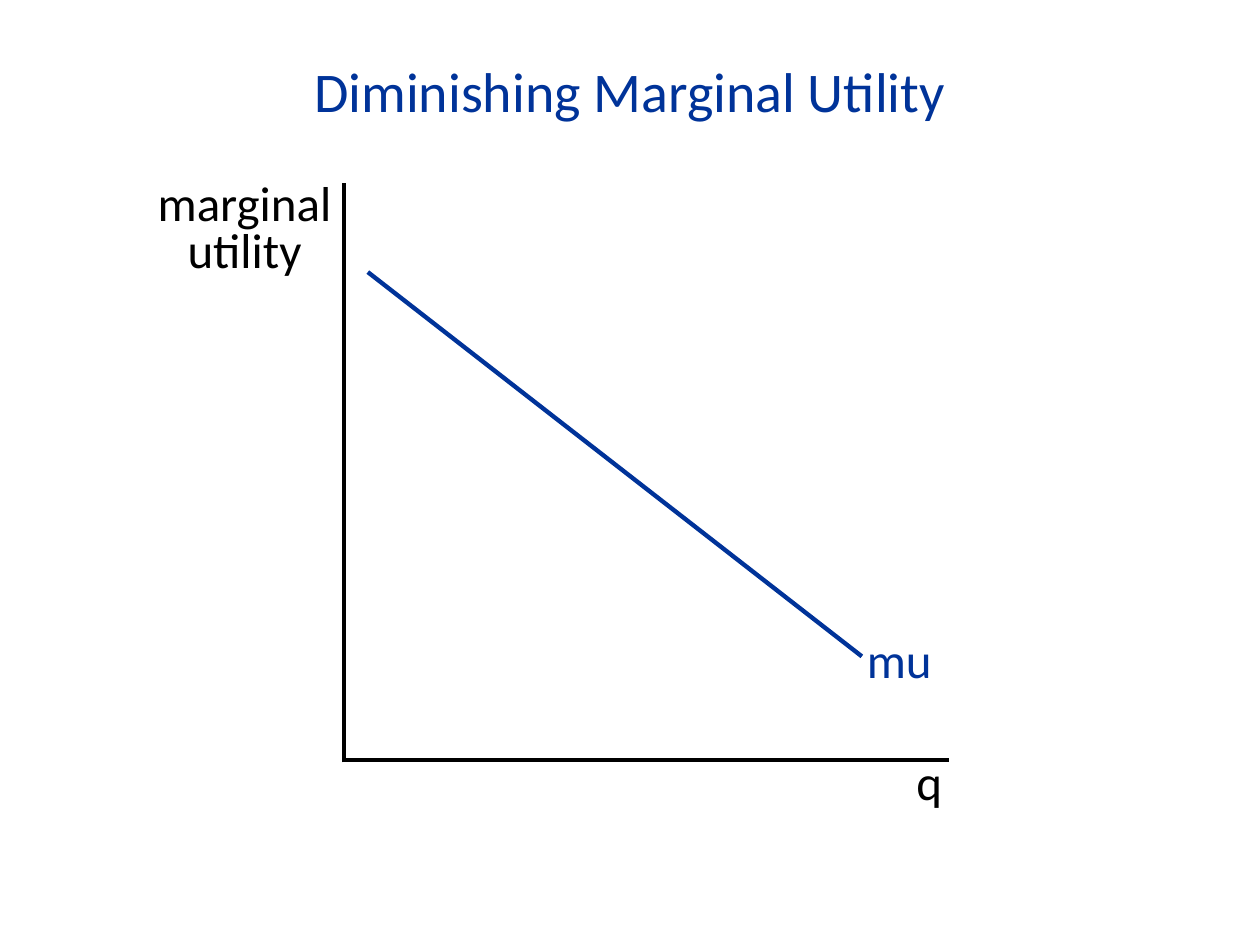
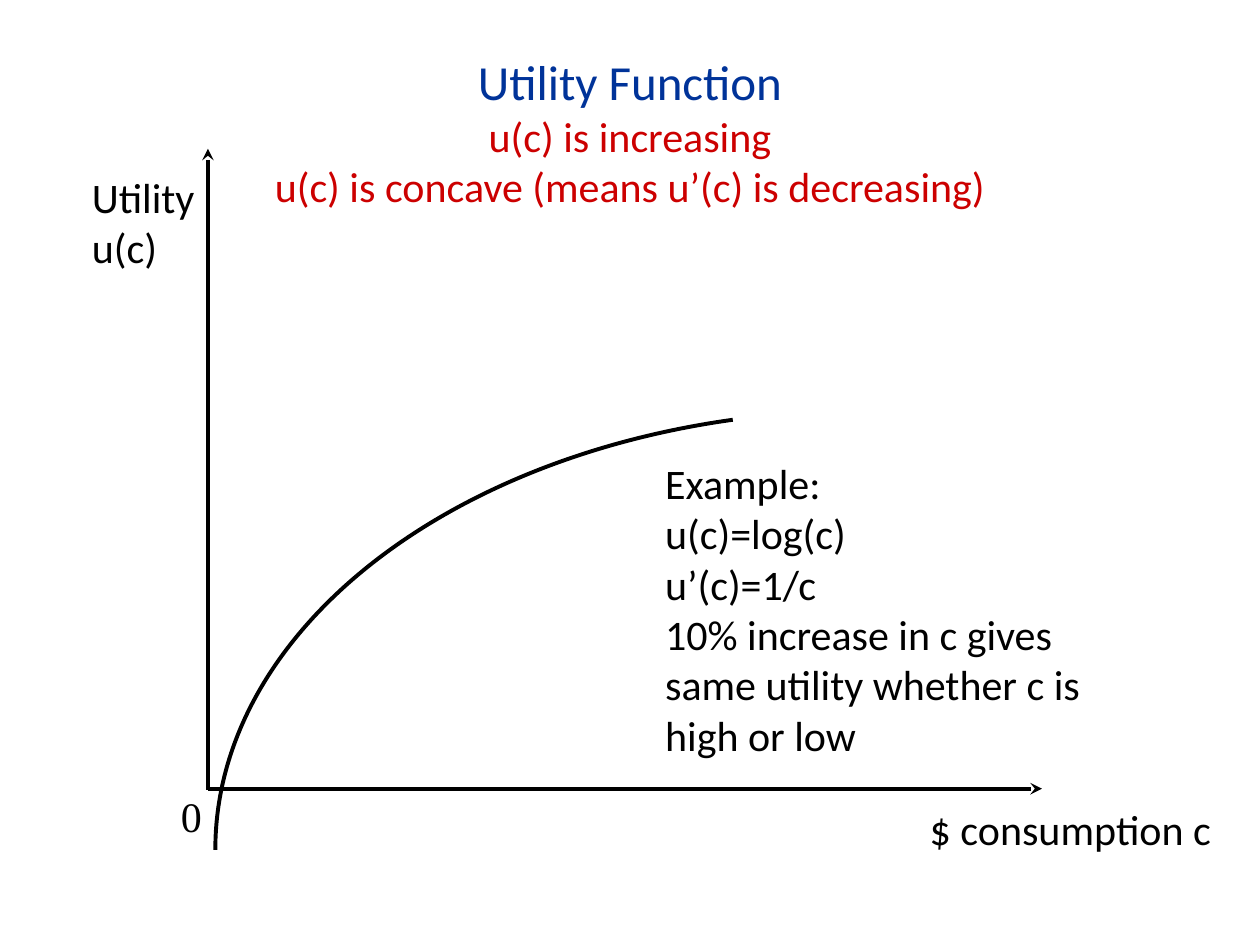
import pptx
import pptx.util
import pptx.dml.color
import pptx.enum.shapes
import pptx.enum.text
import pptx.oxml.ns
from lxml import etree

Pt = pptx.util.Pt
RGBColor = pptx.dml.color.RGBColor
ALIGN = pptx.enum.text.PP_ALIGN

BLUE = RGBColor(0x00, 0x33, 0x99)
RED = RGBColor(0xCC, 0x00, 0x00)
BLACK = RGBColor(0x00, 0x00, 0x00)

TITLE_ONLY = 5
ARC_UNITS_PER_DEGREE = 0.6

# Boxes are (left, top, width, height); lines are (start, end); all in points.
SLIDES = [
    {
        "title": [("Diminishing Marginal Utility", 32, BLUE)],
        "title_box": (50.4, 28.8, 619.2, 50),
        "line_width": 2.5,
        "lines": [
            {"ends": ((196.6, 435.6), (196.6, 104.4)), "color": BLACK},
            {"ends": ((196.6, 434.2), (542.2, 434.2)), "color": BLACK},
            {"ends": ((210.2, 155.5), (492.5, 375.1)), "color": BLUE},
        ],
        "labels": [
            {"lines": ["marginal", "utility"], "box": (77.8, 101.5, 123.8, 61.2), "size": 28,
             "paragraph": {"alignment": ALIGN.CENTER, "line_spacing": 0.8}},
            {"lines": ["q"], "box": (516.6, 426.2, 35, 41), "size": 28},
            {"lines": ["mu"], "box": (488.2, 356.4, 66.2, 41), "size": 28, "color": BLUE},
        ],
    },
    {
        "title": [
            ("Utility Function", 28, BLUE),
            ("u(c) is increasing", 24, RED),
            ("u(c) is concave (means u’(c) is decreasing)", 24, RED),
        ],
        "title_box": (89.3, 25.9, 541.4, 99.4),
        "line_width": 2.25,
        "lines": [
            {"ends": ((118.8, 451.2), (118.8, 85)), "color": BLACK, "arrow": True},
            {"ends": ((118.8, 450.7), (595.4, 450.7)), "color": BLACK, "arrow": True},
        ],
        "arc": {"box": (242.6, 115.2, 501.1, 740.2), "rotation": 270, "degrees": (269.96, 343.13)},
        "labels": [
            {"lines": ["0"], "box": (76.3, 448, 66.2, 37), "size": 24,
             "name": "Times New Roman", "paragraph": {"alignment": ALIGN.CENTER}},
            {"lines": ["Utility", "u(c)"], "box": (45.4, 94.3, 78.5, 66), "size": 24},
            {"lines": ["$ consumption c"], "box": (524.2, 455.8, 187.2, 36), "size": 24},
            {"lines": ["Example:", "u(c)=log(c)", "u’(c)=1/c",
                       "10% increase in c gives same utility whether c is high or low"],
             "box": (373, 257.8, 270.7, 203.8), "size": 24},
        ],
    },
]


def in_points(values):
    return [Pt(value) for value in values]


def set_attributes(target, values):
    for name, value in values.items():
        setattr(target, name, value)


def fill_text(frame, lines, paragraph_format):
    """Write (text, size, colour, font name) lines, one paragraph each."""
    set_attributes(frame, {
        "word_wrap": True,
        "auto_size": pptx.enum.text.MSO_AUTO_SIZE.NONE,
        "vertical_anchor": pptx.enum.text.MSO_ANCHOR.TOP,
    })
    for index, (text, size, color, name) in enumerate(lines):
        paragraph = frame.add_paragraph() if index else frame.paragraphs[0]
        set_attributes(paragraph, {"space_before": Pt(0), **paragraph_format})
        run = paragraph.add_run()
        run.text = text
        set_attributes(run.font, {"size": Pt(size), "name": name})
        run.font.color.rgb = color


def add_title(slide, lines, box):
    title = slide.shapes.title
    set_attributes(title, dict(zip(("left", "top", "width", "height"), in_points(box))))
    styled = [(*line, "Calibri") for line in lines]
    fill_text(title.text_frame, styled, {"alignment": ALIGN.CENTER})


def add_line(slide, ends, color, width, arrow=False):
    start, end = ends
    connector = slide.shapes.add_connector(
        pptx.enum.shapes.MSO_CONNECTOR.STRAIGHT, *in_points(start + end))
    connector.line.width = Pt(width)
    connector.line.color.rgb = color
    properties = connector._element.spPr
    etree.SubElement(properties, pptx.oxml.ns.qn("a:effectLst"))
    if arrow:
        etree.SubElement(properties.find(pptx.oxml.ns.qn("a:ln")),
                         pptx.oxml.ns.qn("a:tailEnd"), type="stealth")


def add_arc(slide, box, rotation, degrees, width):
    arc = slide.shapes.add_shape(pptx.enum.shapes.MSO_SHAPE.ARC, *in_points(box))
    arc.rotation = rotation
    for index, angle in enumerate(degrees):
        arc.adjustments[index] = angle * ARC_UNITS_PER_DEGREE
    arc.shadow.inherit = False
    arc.fill.background()
    arc.line.width = Pt(width)
    arc.line.color.rgb = BLACK


def add_label(slide, lines, box, size, color=BLACK, name="Calibri", paragraph=None):
    text_box = slide.shapes.add_textbox(*in_points(box))
    styled = [(text, size, color, name) for text in lines]
    fill_text(text_box.text_frame, styled, paragraph or {"alignment": ALIGN.LEFT})


def main():
    presentation = pptx.Presentation()
    presentation.slide_width = Pt(720)
    presentation.slide_height = Pt(540)
    for content in SLIDES:
        slide = presentation.slides.add_slide(presentation.slide_layouts[TITLE_ONLY])
        add_title(slide, content["title"], content["title_box"])
        for line in content["lines"]:
            add_line(slide, width=content["line_width"], **line)
        if "arc" in content:
            add_arc(slide, width=content["line_width"], **content["arc"])
        for label in content["labels"]:
            add_label(slide, **label)
    presentation.save("out.pptx")


if __name__ == "__main__":
    main()
